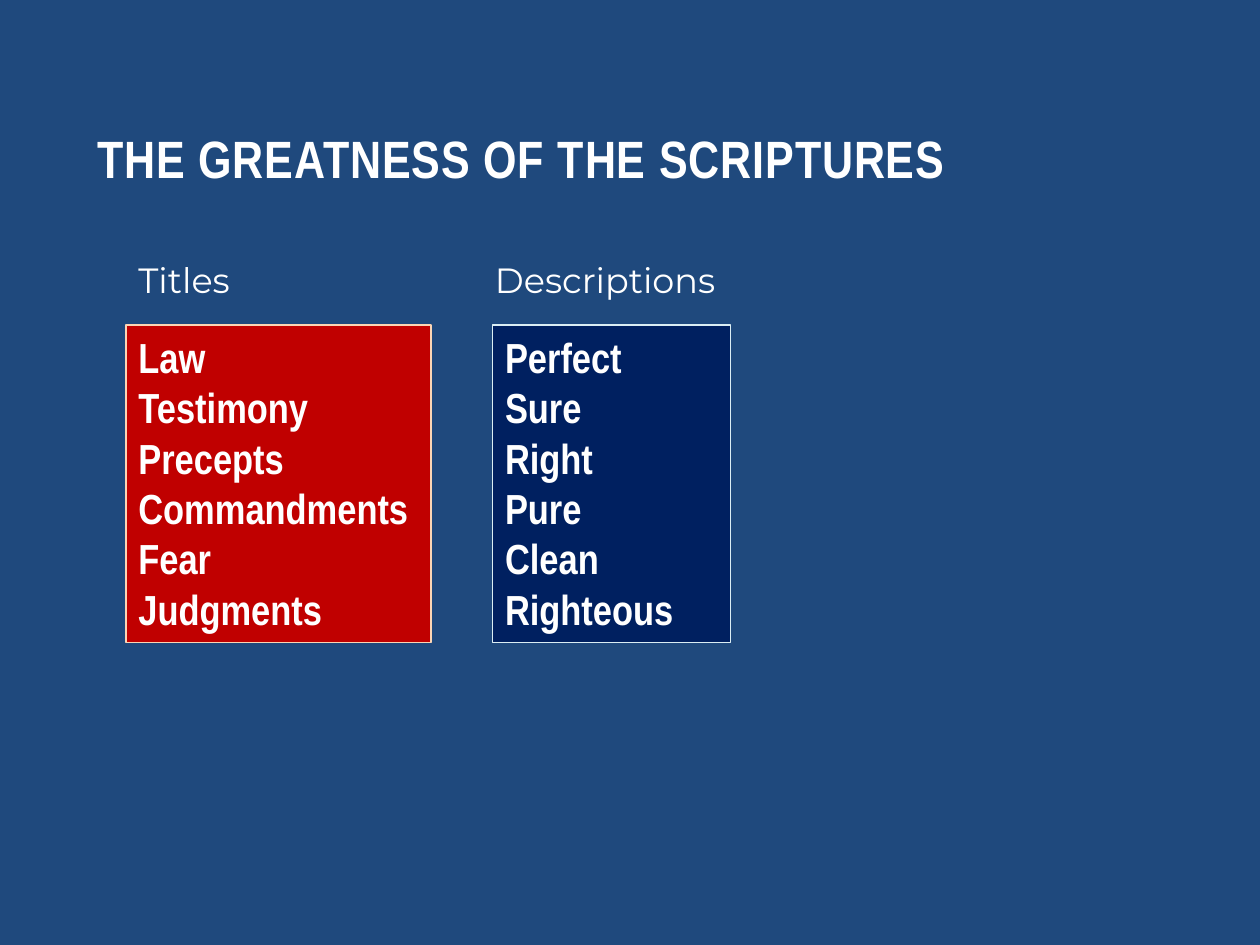
"""Build the slide that pairs titles of the Scriptures with their descriptions."""
import pptx
import pptx.dml.color
import pptx.enum.shapes
import pptx.enum.text
import pptx.util

Inches = pptx.util.Inches
COLORS = {
    "background": "1F497D",
    "text": "FFFFFF",
    "titles": "C00000",
    "titles_line": "FCD5B5",
    "descriptions": "002060",
    "descriptions_line": "DBEEF4",
}


def rgb(name):
    return pptx.dml.color.RGBColor.from_string(COLORS[name])


def write(sp, text, size, font, bold=False, wrap=True, anchor="TOP", spacing=None):
    tf = sp.text_frame
    tf.text = text
    tf.word_wrap = wrap
    tf.auto_size = pptx.enum.text.MSO_AUTO_SIZE.NONE
    tf.vertical_anchor = getattr(pptx.enum.text.MSO_ANCHOR, anchor)
    for p in tf.paragraphs:
        p.alignment = pptx.enum.text.PP_ALIGN.LEFT
        for r in p.runs:
            r.font.size = pptx.util.Pt(size)
            r.font.name = font
            r.font.bold = bold
            r.font.color.rgb = rgb("text")
            if spacing:
                r.font._element.set("spc", str(spacing))


prs = pptx.Presentation()
prs.slide_width, prs.slide_height = Inches(10), Inches(7.5)
s = prs.slides.add_slide(prs.slide_layouts[5])
s.background.fill.solid()
s.background.fill.fore_color.rgb = rgb("background")

title = s.shapes.title
title.left, title.top = Inches(0.67), Inches(0.3)
title.width, title.height = Inches(8.67), Inches(1.25)
write(title, "THE GREATNESS OF THE SCRIPTURES", 30, "Arial Narrow",
      bold=True, anchor="BOTTOM", spacing=50)

columns = [
    ("titles", 1, 2.42, "Titles", 1, 1.07, False,
     ["Law", "Testimony", "Precepts", "Commandments", "Fear", "Judgments"]),
    ("descriptions", 3.91, 1.89, "Descriptions", 3.83, 2.46, True,
     ["Perfect", "Sure", "Right", "Pure", "Clean", "Righteous"]),
]
for color, left, width, heading, head_left, head_width, wrap, words in columns:
    sp = s.shapes.add_shape(pptx.enum.shapes.MSO_SHAPE.RECTANGLE,
                            Inches(left), Inches(2.58), Inches(width), Inches(2.52))
    sp.shadow.inherit = False
    sp.fill.solid()
    sp.fill.fore_color.rgb = rgb(color)
    sp.line.color.rgb = rgb(color + "_line")
    sp.line.width = pptx.util.Pt(0.75)
    write(sp, "\n".join(words), 24, "Arial Narrow", bold=True)

    sp = s.shapes.add_textbox(Inches(head_left), Inches(2), Inches(head_width), Inches(0.44))
    write(sp, heading, 20, "Montserrat", wrap=wrap)

prs.save("out.pptx")
